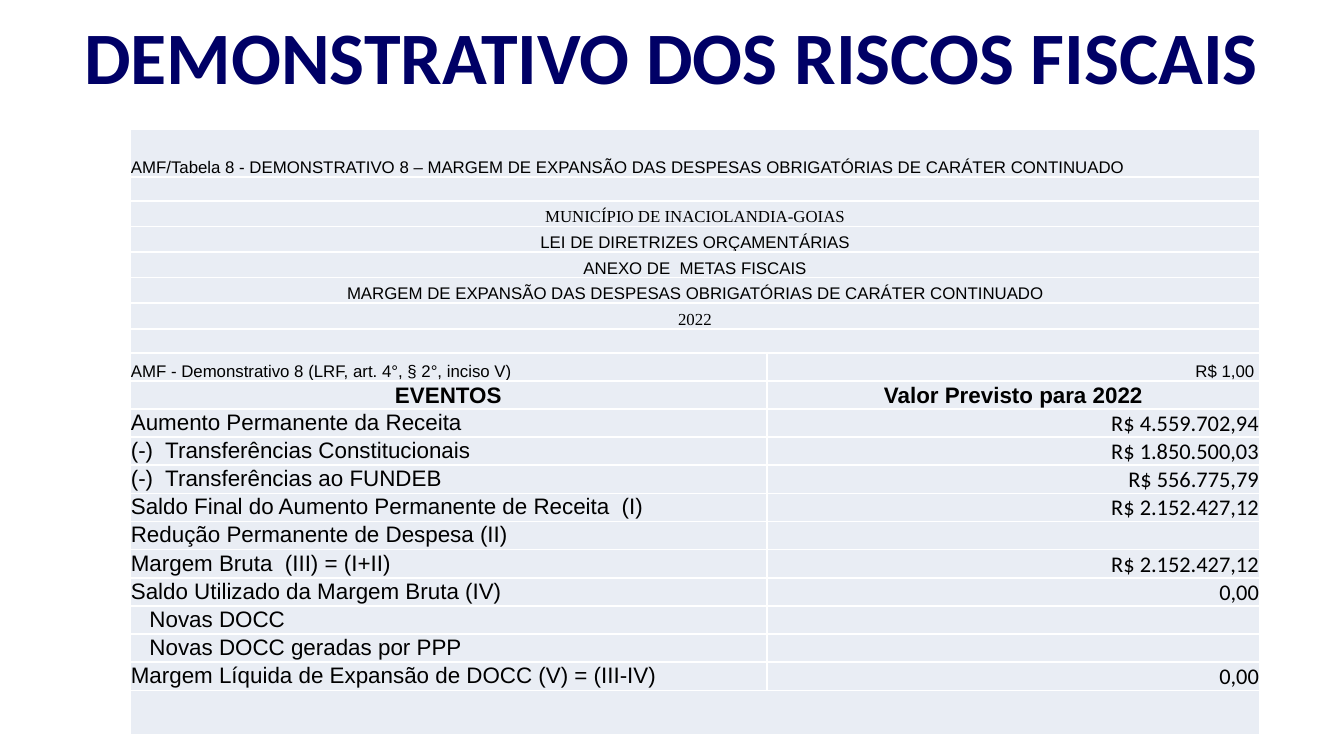
from pptx import Presentation
from pptx.dml.color import RGBColor as RGB
from pptx.enum.shapes import MSO_SHAPE as Shape
from pptx.enum.text import MSO_ANCHOR as Anchor, PP_ALIGN as Align
from pptx.oxml import parse_xml
from pptx.oxml.ns import nsdecls
from pptx.util import Pt

COLORS = {"white": "FFFFFF", "navy": "000066", "black": "000000", "cell": "E9EDF4"}
ARIAL, TIMES, CALIBRI = "Arial", "Times New Roman", "Calibri"
COLS = [341.3, 264.2]
INDENT = 10

HEADS = [
    ("MUNICÍPIO DE INACIOLANDIA-GOIAS", TIMES),
    ("LEI DE DIRETRIZES ORÇAMENTÁRIAS", ARIAL),
    ("ANEXO DE  METAS FISCAIS", ARIAL),
    ("MARGEM DE EXPANSÃO DAS DESPESAS OBRIGATÓRIAS DE CARÁTER CONTINUADO", ARIAL),
    ("2022", TIMES),
]
EVENTS = [
    ("Aumento Permanente da Receita", "R$ 4.559.702,94", 0),
    ("(-)  Transferências Constitucionais", "R$ 1.850.500,03", 0),
    ("(-)  Transferências ao FUNDEB", "R$ 556.775,79", 0),
    ("Saldo Final do Aumento Permanente de Receita  (I)", "R$ 2.152.427,12", 0),
    ("Redução Permanente de Despesa (II)", "", 0),
    ("Margem Bruta  (III) = (I+II)", "R$ 2.152.427,12", 0),
    ("Saldo Utilizado da Margem Bruta (IV)", "0,00", 0),
    ("Novas DOCC", "", INDENT),
    ("Novas DOCC geradas por PPP", "", INDENT),
    ("Margem Líquida de Expansão de DOCC (V) = (III-IV)", "0,00", 0),
]
HEIGHTS = [25.7, 12.9] + [13.7] * len(HEADS) + [12.9, 15, 13.9] + [15.1] * len(EVENTS) + [23.6]


def color(name):
    return RGB.from_string(COLORS[name])


def write(frame, text, size, font, tint="black", bold=False, align=Align.LEFT):
    para = frame.paragraphs[0]
    para.text = text
    para.alignment = align
    for run in para.runs:
        run.font.size = Pt(size)
        run.font.name = font
        run.font.bold = bold
        run.font.color.rgb = color(tint)
    if not text:
        # An empty cell keeps its row low only with a small end mark.
        para._p.get_or_add_endParaRPr().set("sz", str(size * 100))


def add_panel(slide):
    panel = slide.shapes.add_shape(Shape.RECTANGLE, Pt(0), Pt(72.7), Pt(720), Pt(332))
    panel.shadow.inherit = False
    panel.fill.solid()
    panel.fill.fore_color.rgb = color("white")
    panel.line.color.rgb = color("white")
    panel.line.width = Pt(0.75)


def add_title(slide, text):
    frame = slide.shapes.add_textbox(Pt(24.5), Pt(4.3), Pt(670.3), Pt(49.7)).text_frame
    frame.word_wrap = True
    frame.vertical_anchor = Anchor.MIDDLE
    write(frame, text, 39.6, CALIBRI, "navy", True, Align.CENTER)


def style(cell):
    """Give a cell its fill, narrow insets and white borders."""
    cell.margin_left = cell.margin_right = cell.margin_top = Pt(0.6)
    cell.margin_bottom = Pt(0)
    props = cell._tc.get_or_add_tcPr()
    for side in ("lnL", "lnR", "lnT", "lnB"):
        props.append(parse_xml(
            f'<a:{side} {nsdecls("a")} w="{Pt(1)}"><a:solidFill>'
            f'<a:srgbClr val="{COLORS["white"]}"/></a:solidFill></a:{side}>'))
    cell.fill.solid()
    cell.fill.fore_color.rgb = color("cell")


def fill_cell(cell, text, size=9, font=ARIAL, align=Align.LEFT,
              anchor=Anchor.BOTTOM, bold=False, indent=0):
    cell.vertical_anchor = anchor
    cell.margin_left = Pt(0.6 + indent)
    write(cell.text_frame, text, size, font, bold=bold, align=align)


def add_grid(slide):
    shape = slide.shapes.add_table(len(HEIGHTS), len(COLS), Pt(69.5), Pt(69.1),
                                   Pt(sum(COLS)), Pt(sum(HEIGHTS)))
    table = shape.table
    for col, width in zip(table.columns, COLS):
        col.width = Pt(width)
    for row, height in zip(table.rows, HEIGHTS):
        row.height = Pt(height)
    for cell in table.iter_cells():
        style(cell)
        fill_cell(cell, "")
    units = 2 + len(HEADS) + 1
    for row in [*range(units), len(HEIGHTS) - 1]:
        table.cell(row, 0).merge(table.cell(row, 1))
    return table, units


def fill_grid(table, units):
    """Write the heading rows, then the unit row, column heads and events."""
    fill_cell(table.cell(0, 0), "AMF/Tabela 8 - DEMONSTRATIVO 8 – MARGEM DE EXPANSÃO "
              "DAS DESPESAS OBRIGATÓRIAS DE CARÁTER CONTINUADO")
    for row, (text, font) in enumerate(HEADS, 2):
        fill_cell(table.cell(row, 0), text, font=font, align=Align.CENTER)
    fill_cell(table.cell(units, 0), "AMF - Demonstrativo 8 (LRF, art. 4°, § 2°, inciso V)")
    fill_cell(table.cell(units, 1), "R$ 1,00 ", align=Align.RIGHT)
    for col, text in enumerate(("EVENTOS", "Valor Previsto para 2022")):
        fill_cell(table.cell(units + 1, col), text, 12, align=Align.CENTER,
                  anchor=Anchor.MIDDLE, bold=True)
    for row, (event, value, indent) in enumerate(EVENTS, units + 2):
        fill_cell(table.cell(row, 0), event, 12, anchor=Anchor.TOP, indent=indent)
        fill_cell(table.cell(row, 1), value, 12, CALIBRI, Align.RIGHT, Anchor.TOP)


def main():
    deck = Presentation()
    deck.slide_width, deck.slide_height = Pt(720), Pt(405)
    slide = deck.slides.add_slide(deck.slide_layouts[6])
    add_panel(slide)
    add_title(slide, "DEMONSTRATIVO DOS RISCOS FISCAIS")
    fill_grid(*add_grid(slide))
    deck.save("out.pptx")


if __name__ == "__main__":
    main()
